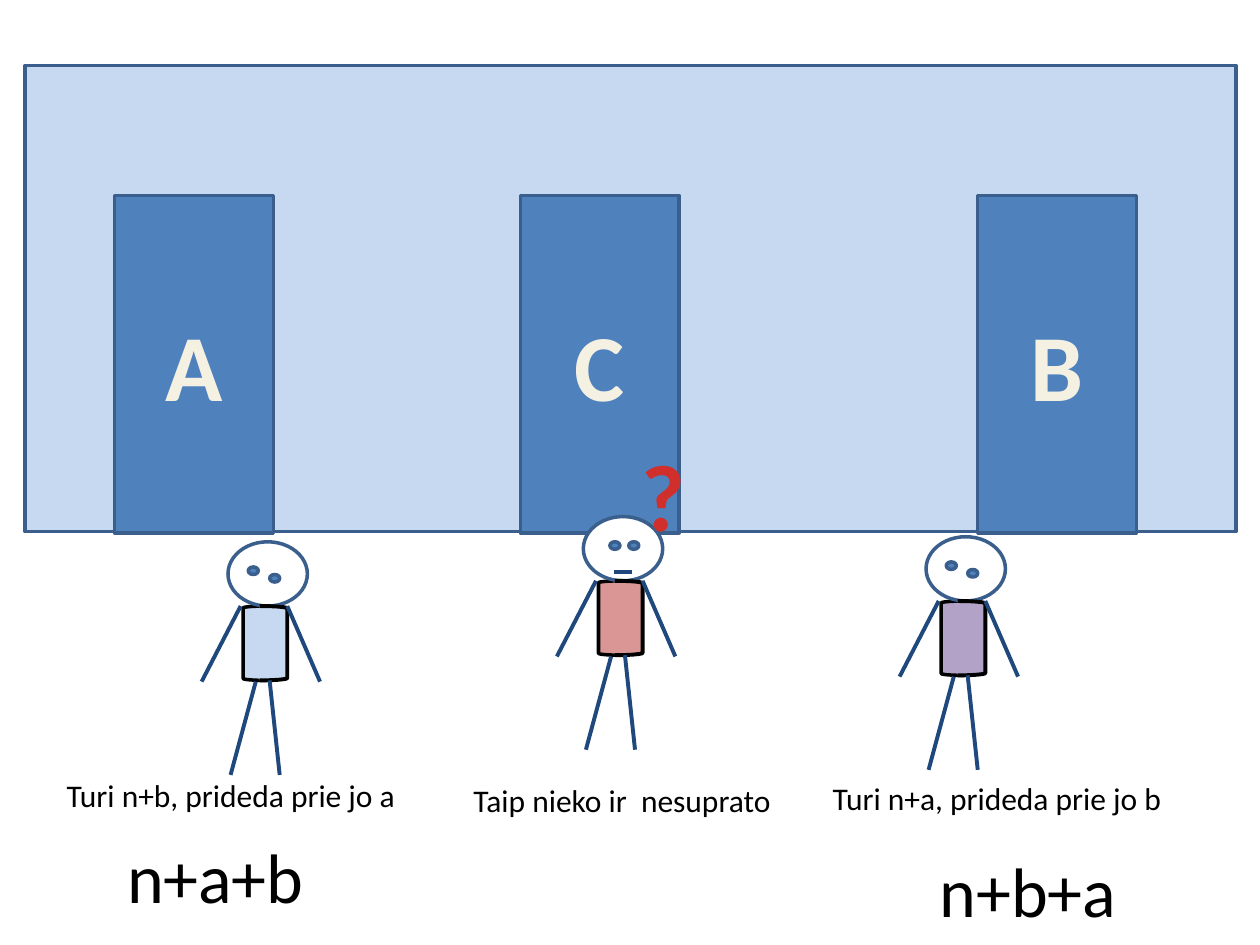
from pptx import Presentation
from pptx.dml.color import RGBColor
from pptx.enum.shapes import MSO_CONNECTOR, MSO_SHAPE
from pptx.enum.text import MSO_ANCHOR, MSO_AUTO_SIZE, PP_ALIGN
from pptx.oxml.ns import qn
from pptx.util import Inches, Pt
from lxml import etree

RECTANGLE, OVAL = MSO_SHAPE.RECTANGLE, MSO_SHAPE.OVAL
LEFT_BRACKET, RIGHT_BRACKET = MSO_SHAPE.LEFT_BRACKET, MSO_SHAPE.RIGHT_BRACKET
STRAIGHT = MSO_CONNECTOR.STRAIGHT
LEFT, CENTER, MIDDLE = PP_ALIGN.LEFT, PP_ALIGN.CENTER, MSO_ANCHOR.MIDDLE
FIT_SHAPE = MSO_AUTO_SIZE.SHAPE_TO_FIT_TEXT

BLACK = RGBColor(0x00, 0x00, 0x00)
WHITE = RGBColor(0xFF, 0xFF, 0xFF)
BLUE = RGBColor(0x4F, 0x81, 0xBD)
EDGE = RGBColor(0x3A, 0x5F, 0x8C)
NAVY = RGBColor(0x1F, 0x49, 0x7D)
PALE_BLUE = RGBColor(0xC6, 0xD9, 0xF1)
PINK = RGBColor(0xD9, 0x96, 0x94)
PURPLE = RGBColor(0xB3, 0xA2, 0xC7)
CREAM = RGBColor(0xF4, 0xF1, 0xE3)
RED = RGBColor(0xD0, 0x2F, 0x2C)

WIDTH, HEIGHT = Inches(10), Inches(7.5)
CELL = WIDTH // 1000
FONT = "Calibri"

WALL = (20, 52, 961, 370)
DOORS = [("A", 71), ("B", 756), ("C", 393)]
DOOR_TOP, DOOR_WIDTH, DOOR_HEIGHT = 103, 126, 268
SLANTED_EYES = [(37, 20), (54, 26)]
LEVEL_EYES = [(42, 20), (57, 20)]
LIMBS = [
    ((54, 110), (62, 185)),
    ((68, 51), (94, 111)),
    ((43, 111), (23, 185)),
    ((31, 51), (0, 111)),
]
MOUTH = ((60, 44), (45, 44))
FIGURES = [
    ((714, 426), PURPLE, SLANTED_EYES, LIMBS),
    ((160, 430), PALE_BLUE, SLANTED_EYES, LIMBS),
    ((442, 410), PINK, LEVEL_EYES, LIMBS + [MOUTH]),
]
CAPTIONS = [
    ("Turi n+b, prideda prie jo a", (43, 611, 315, 40), 18),
    ("Turi n+a, prideda prie jo b", (651, 613, 315, 40), 18),
    ("Taip nieko ir  nesuprato", (366, 615, 260, 40), 18),
    ("n+a+b", (91, 657, 195, 77), 40),
    ("n+b+a", (736, 668, 195, 77), 40),
]


def cells(*counts):
    """Turn counts of grid cells into lengths."""
    return [count * CELL for count in counts]


def write(frame, text, size=18, color=BLACK, bold=False, align=LEFT):
    """Write one formatted paragraph into a text frame."""
    para = frame.paragraphs[0]
    para.alignment = align
    span = para.add_run()
    span.text = text
    span.font.name = FONT
    span.font.size = Pt(size)
    span.font.bold = bold
    span.font.color.rgb = color


def add_block(shapes, kind, box, fill, line=EDGE, weight=2):
    """Add a filled and outlined preset shape."""
    shape = shapes.add_shape(kind, *cells(*box))
    shape.shadow.inherit = False
    shape.fill.solid()
    shape.fill.fore_color.rgb = fill
    shape.line.color.rgb = line
    shape.line.width = Pt(weight)
    return shape


def add_stroke(shapes, start, end):
    """Add a straight line without a shadow."""
    stroke = shapes.add_connector(STRAIGHT, *cells(*start, *end))
    stroke.line.color.rgb = NAVY
    stroke.line.width = Pt(2.25)
    etree.SubElement(stroke._element.spPr, qn("a:effectLst"))


def add_label(shapes, text, box, wrap=True, **style):
    """Add a text box that grows with its text."""
    frame = shapes.add_textbox(*cells(*box)).text_frame
    frame.word_wrap = wrap
    frame.auto_size = FIT_SHAPE
    write(frame, text, **style)


def add_building(shapes, box):
    """Place the wall and its lettered doors in the box."""
    left, top, _, _ = box
    add_block(shapes, RECTANGLE, box, PALE_BLUE)
    for letter, offset in DOORS:
        door_box = (left + offset, top + DOOR_TOP, DOOR_WIDTH, DOOR_HEIGHT)
        frame = add_block(shapes, RECTANGLE, door_box, BLUE).text_frame
        frame.vertical_anchor = MIDDLE
        write(frame, letter, size=54, color=CREAM, bold=True, align=CENTER)


def add_figure(shapes, origin, shirt, eyes, strokes):
    """Place a grouped stick figure from its top left corner."""
    left, top = origin
    parts = shapes.add_group_shape().shapes

    def shift(x, y):
        """Move a point of the figure to its place on the slide."""
        return left + x, top + y

    add_block(parts, LEFT_BRACKET, (*shift(33, 51), 18, 59), shirt, BLACK)
    add_block(parts, OVAL, (*shift(21, 0), 63, 51), WHITE)
    for eye in eyes:
        add_block(parts, OVAL, (*shift(*eye), 8, 6), BLUE)
    add_block(parts, RIGHT_BRACKET, (*shift(46, 51), 22, 59), shirt, BLACK, 2.25)
    for start, end in strokes:
        add_stroke(parts, shift(*start), shift(*end))


def main():
    """Build and save the slide."""
    deck = Presentation()
    deck.slide_width, deck.slide_height = WIDTH, HEIGHT
    page = deck.slides.add_slide(deck.slide_layouts[6])
    add_building(page.shapes, WALL)
    for figure in FIGURES:
        add_figure(page.shapes, *figure)
    add_label(page.shapes, "?", (499, 342, 55, 101), wrap=False,
              size=54, color=RED, bold=True, align=CENTER)
    for text, box, size in CAPTIONS:
        add_label(page.shapes, text, box, size=size)
    deck.save("out.pptx")


if __name__ == "__main__":
    main()
